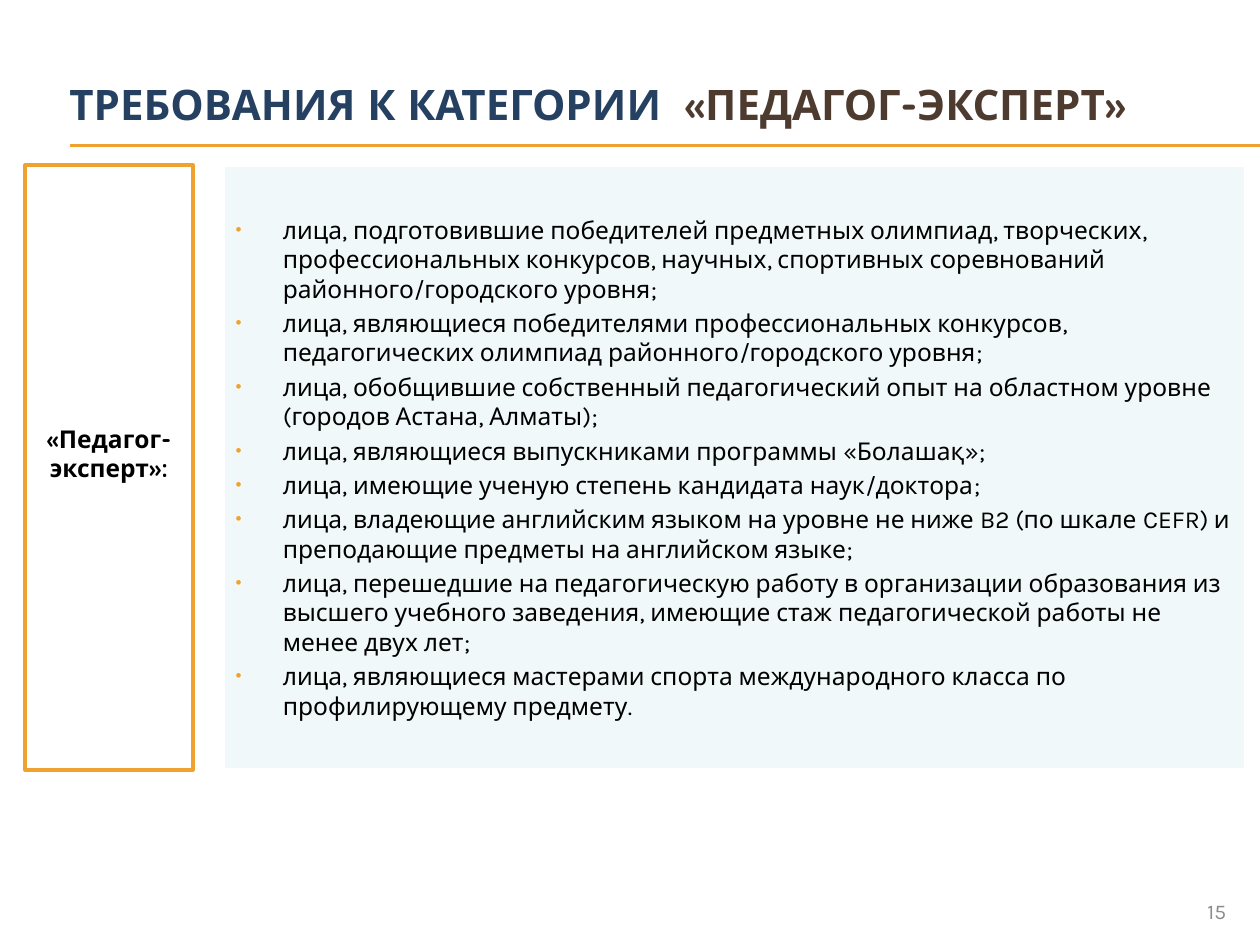
from lxml import etree
from pptx import Presentation
from pptx import util as u
from pptx.dml import color
from pptx.enum import shapes, text
from pptx.oxml import ns

AMBER = "F0A22E"
HEADING_FONT, BODY_FONT = "Quicksand", "Karla"
PANEL_TOP, PANEL_HEIGHT = 94.3, 345.6

REQUIREMENTS = [
    "лица, подготовившие победителей предметных олимпиад, творческих, профессиональных конкурсов, "
    "научных, спортивных соревнований районного/городского уровня;",
    "лица, являющиеся победителями профессиональных конкурсов, педагогических олимпиад "
    "районного/городского уровня;",
    "лица, обобщившие собственный педагогический опыт на областном уровне (городов Астана, Алматы);",
    "лица, являющиеся выпускниками программы «Болашақ»;",
    "лица, имеющие ученую степень кандидата наук/доктора;",
    "лица, владеющие английским языком на уровне не ниже B2 (по шкале CEFR) и преподающие "
    "предметы на английском языке;",
    "лица, перешедшие на педагогическую работу в организации образования из высшего учебного "
    "заведения, имеющие стаж педагогической работы не менее двух лет;",
    "лица, являющиеся мастерами спорта международного класса по профилирующему предмету.",
]


def rgb(value):
    return color.RGBColor.from_string(value)


def place(item, left, top, width, height):
    item.left, item.top = u.Pt(left), u.Pt(top)
    item.width, item.height = u.Pt(width), u.Pt(height)


def paint(item, fill, outline):
    item.fill.solid()
    item.fill.fore_color.rgb = rgb(fill)
    item.line.color.rgb = rgb(outline)
    item.line.width = u.Pt(2)


def set_frame(frame, anchor=text.MSO_ANCHOR.MIDDLE):
    frame.word_wrap = True
    frame.auto_size = text.MSO_AUTO_SIZE.NONE
    frame.vertical_anchor = anchor


def write(paragraph, wording, size=14, font=BODY_FONT, ink="000000", bold=False,
          align=text.PP_ALIGN.LEFT):
    paragraph.alignment = align
    run = paragraph.add_run()
    run.text = wording
    run.font.size = u.Pt(size)
    run.font.name = font
    run.font.bold = bold
    run.font.color.rgb = rgb(ink)


def add_bullet(paragraph):
    paragraph.space_before = u.Pt(2.8)
    properties = paragraph._p.get_or_add_pPr()
    properties.set("marL", str(u.Pt(27)))
    properties.set("indent", str(u.Pt(-27)))
    tint = etree.SubElement(properties, ns.qn("a:buClr"))
    etree.SubElement(tint, ns.qn("a:srgbClr"), val=AMBER)
    etree.SubElement(properties, ns.qn("a:buSzPct"), val="70000")
    etree.SubElement(properties, ns.qn("a:buFont"), typeface="Arial")
    etree.SubElement(properties, ns.qn("a:buChar"), char="•")


def add_rule(slide, y):
    rule = slide.shapes.add_connector(
        shapes.MSO_CONNECTOR.STRAIGHT, u.Pt(40.3), u.Pt(y), u.Pt(720), u.Pt(y))
    rule.line.color.rgb = rgb(AMBER)
    rule.line.width = u.Pt(0.75)
    etree.SubElement(rule._element.spPr, ns.qn("a:effectLst"))


def fill_title(title):
    place(title, 32.4, 45.4, 648, 28)
    set_frame(title.text_frame)
    heading = title.text_frame.paragraphs[0]
    for wording, ink in (("ТРЕБОВАНИЯ К КАТЕГОРИИ  ", "254061"), ("«ПЕДАГОГ-ЭКСПЕРТ»", "4E3B30")):
        write(heading, wording, size=24, font=HEADING_FONT, ink=ink, bold=True)


def fill_requirements(body):
    place(body, 127.4, PANEL_TOP, 584.6, PANEL_HEIGHT)
    paint(body, "F0F8FA", "FFFFFF")
    frame = body.text_frame
    set_frame(frame)
    for index, requirement in enumerate(REQUIREMENTS):
        paragraph = frame.add_paragraph() if index else frame.paragraphs[0]
        write(paragraph, requirement)
        add_bullet(paragraph)


def add_category(slide):
    category = slide.shapes.add_shape(
        shapes.MSO_SHAPE.RECTANGLE, u.Pt(14.4), u.Pt(PANEL_TOP), u.Pt(95.8), u.Pt(PANEL_HEIGHT))
    category.shadow.inherit = False
    paint(category, "FFFFFF", AMBER)
    set_frame(category.text_frame)
    category.text_frame.margin_bottom = u.Pt(20)
    write(category.text_frame.paragraphs[0], "«Педагог-эксперт»:", font=HEADING_FONT, bold=True,
          align=text.PP_ALIGN.CENTER)


def add_page_number(slide):
    number = slide.shapes.add_textbox(u.Pt(648), u.Pt(509.8), u.Pt(59.8), u.Pt(19.4))
    set_frame(number.text_frame, text.MSO_ANCHOR.TOP)
    write(number.text_frame.paragraphs[0], "15", size=12, ink="8C8C8C", align=text.PP_ALIGN.RIGHT)


def main():
    deck = Presentation()
    deck.slide_width, deck.slide_height = u.Pt(720), u.Pt(540)
    slide = deck.slides.add_slide(deck.slide_layouts[1])
    for y in (82.8, 83.5):
        add_rule(slide, y)
    fill_title(slide.shapes.title)
    fill_requirements(slide.placeholders[1])
    add_category(slide)
    add_page_number(slide)
    deck.save("out.pptx")


if __name__ == "__main__":
    main()
